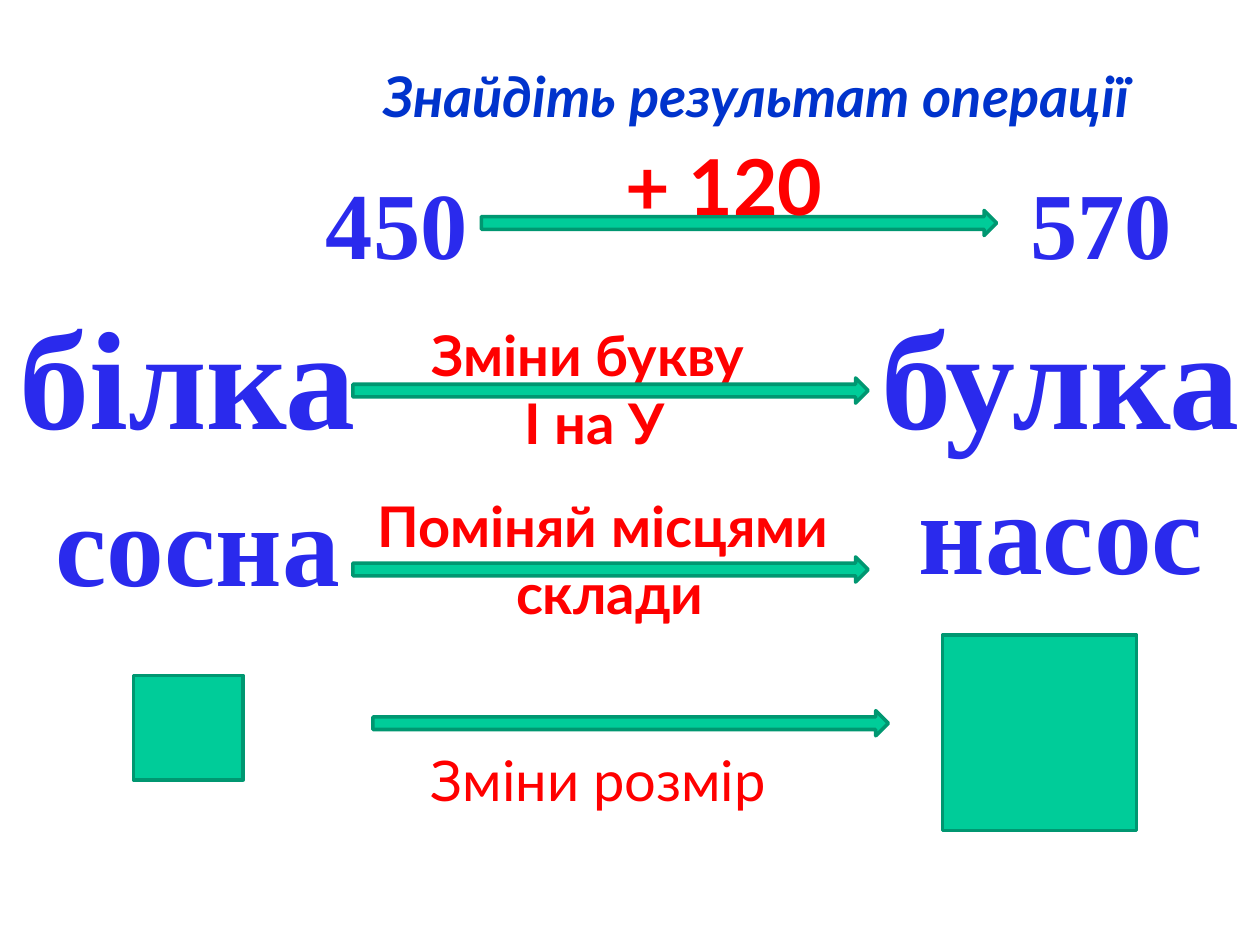
from lxml import etree
from pptx import Presentation
from pptx.dml.color import RGBColor
from pptx.enum.shapes import MSO_SHAPE
from pptx.enum.text import MSO_ANCHOR, MSO_AUTO_SIZE, PP_ALIGN
from pptx.oxml.ns import nsdecls
from pptx.util import Pt

COLORS = {"title": "0033CC", "label": "FF0000", "fill": "00CC99", "line": "009771"}
WORD_GRADIENT = [(0, "000072"), (78, "2A2AED"), (100, "ECECFD")]
LABEL_FONT, WORD_FONT = "Lato", "Times New Roman"

# Boxes are left, top, width, height in points.
TITLE = ("Знайдіть результат операції", (174.24, 9.36, 516.24, 90))
LABELS_BEHIND_ARROWS = [
    (["Поміняй місцями ", "склади"], (175.68, 275.76, 345.6, 87.12), 32, True),
    (["Зміни букву ", "І на У"], (167.04, 185.04, 345.6, 73.44), 32, True),
]
LABELS_OVER_ARROWS = [
    (["+ 120"], (280.8, 83.52, 265.68, 43.92), 44, True),
    (["Зміни розмір"], (169.2, 416.16, 345.6, 58.32), 32, False),
]
WORDS = [
    ("450", (178.56, 90.72, 96.48, 72.72), 54),
    ("570", (581.04, 90.72, 96.48, 72.72), 54),
    ("білка", (2.88, 162, 208.8, 104.4), 80),
    ("булка", (495.36, 162, 221.04, 104.4), 80),
    ("сосна", (23.76, 265.68, 178.56, 87.12), 66),
    ("насос", (516.96, 258.48, 178.56, 87.12), 66),
]
ARROW_SIZE = (294.48, 14.4)
ARROW_STARTS = [(275.04, 120.24), (201.6, 216), (201.6, 318.24), (213.12, 406.08)]
SQUARES = [(76.32, 385.92, 62.64, 59.76), (538.56, 362.88, 110.88, 111.6)]


def set_all(target, values):
    for name, value in values.items():
        setattr(target, name, value)


def place(shape, box):
    set_all(shape, dict(zip(("left", "top", "width", "height"), map(Pt, box))))


def write(frame, lines, frame_format, font_format, color=None):
    """Fill a frame with centred lines; without a color they get the word gradient."""
    set_all(frame, frame_format)
    for index, line in enumerate(lines):
        paragraph = frame.add_paragraph() if index else frame.paragraphs[0]
        paragraph.alignment = PP_ALIGN.CENTER
        run = paragraph.add_run()
        run.text = line
        set_all(run.font, font_format)
        if color:
            run.font.color.rgb = RGBColor.from_string(color)
        else:
            run._r.get_or_add_rPr().insert(0, word_gradient())


def word_gradient():
    stops = "".join(
        f'<a:gs pos="{percent * 1000}"><a:srgbClr val="{color}"/></a:gs>'
        for percent, color in WORD_GRADIENT
    )
    return etree.fromstring(
        f'<a:gradFill {nsdecls("a")}><a:gsLst>{stops}</a:gsLst>'
        '<a:lin ang="5400000" scaled="0"/></a:gradFill>'
    )


def add_labels(slide, labels):
    for lines, box, size, bold in labels:
        label = slide.shapes.add_textbox(*map(Pt, box))
        write(label.text_frame, lines, LABEL_FRAME,
              {"name": LABEL_FONT, "size": Pt(size), "bold": bold}, COLORS["label"])


def add_solid(slide, kind, box):
    shape = slide.shapes.add_shape(kind, *map(Pt, box))
    shape.shadow.inherit = False
    shape.fill.solid()
    shape.fill.fore_color.rgb = RGBColor.from_string(COLORS["fill"])
    shape.line.color.rgb = RGBColor.from_string(COLORS["line"])
    shape.line.width = Pt(2)


LABEL_FRAME = {"word_wrap": True, "vertical_anchor": MSO_ANCHOR.MIDDLE,
               "auto_size": MSO_AUTO_SIZE.NONE}
WORD_FRAME = {"word_wrap": False, "vertical_anchor": MSO_ANCHOR.TOP,
              "auto_size": MSO_AUTO_SIZE.SHAPE_TO_FIT_TEXT}


def main():
    deck = Presentation()
    set_all(deck, {"slide_width": Pt(720), "slide_height": Pt(540)})
    slide = deck.slides.add_slide(deck.slide_layouts[5])

    heading, heading_box = TITLE
    place(slide.shapes.title, heading_box)
    write(slide.shapes.title.text_frame, [heading], LABEL_FRAME,
          {"name": LABEL_FONT, "size": Pt(32), "bold": True, "italic": True},
          COLORS["title"])

    add_labels(slide, LABELS_BEHIND_ARROWS)
    for word, box, size in WORDS:
        word_box = slide.shapes.add_textbox(*map(Pt, box))
        write(word_box.text_frame, [word], WORD_FRAME,
              {"name": WORD_FONT, "size": Pt(size), "bold": True})
    for start in ARROW_STARTS:
        add_solid(slide, MSO_SHAPE.RIGHT_ARROW, start + ARROW_SIZE)
    add_labels(slide, LABELS_OVER_ARROWS)
    for box in SQUARES:
        add_solid(slide, MSO_SHAPE.FLOWCHART_PROCESS, box)

    deck.save("out.pptx")


if __name__ == "__main__":
    main()
